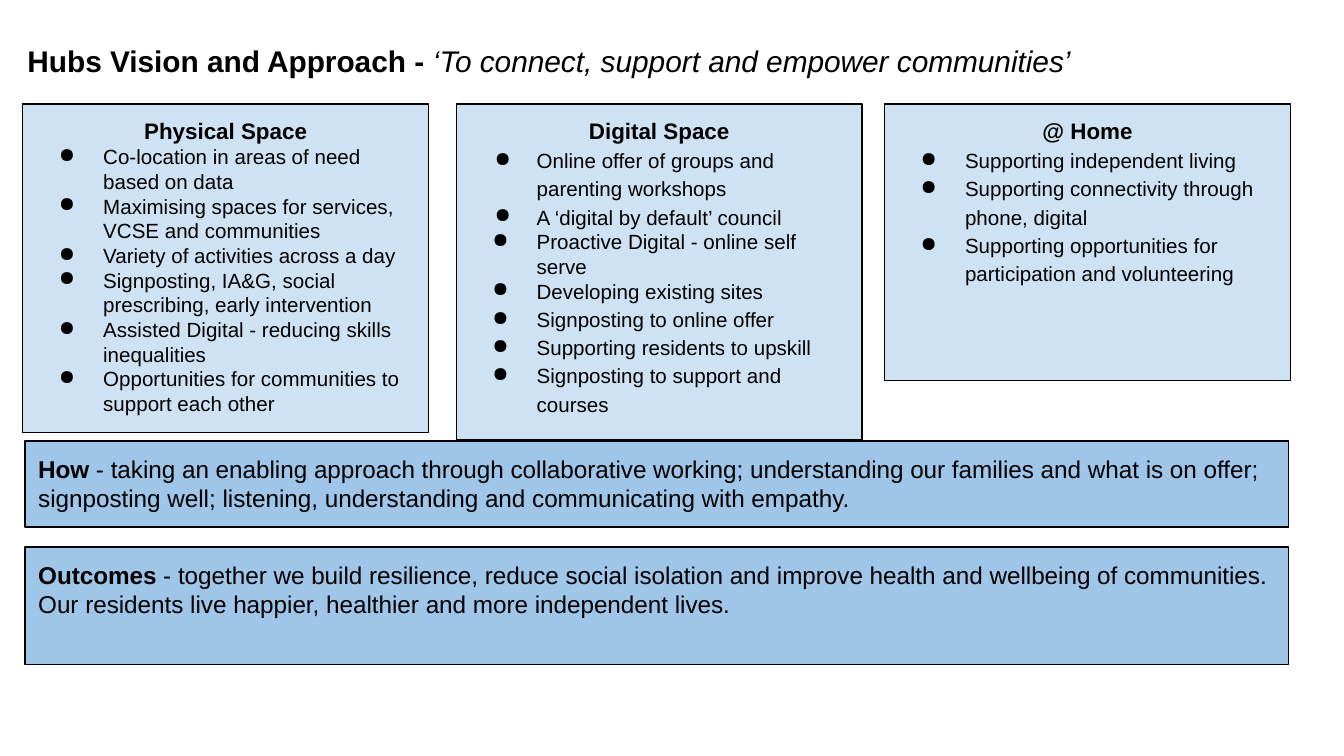
import pptx
import pptx.dml.color
import pptx.enum.shapes
import pptx.enum.text
import pptx.util
from lxml import etree

Pt = pptx.util.Pt
RGB = pptx.dml.color.RGBColor.from_string
Align = pptx.enum.text.PP_ALIGN
Anchor = pptx.enum.text.MSO_ANCHOR

THEME = {
    "font": "Arial", "ink": RGB("000000"),
    "space": RGB("CFE2F3"), "band": RGB("9FC5E8"),
    "title": Pt(16), "heading": Pt(12), "bullet": Pt(11), "statement": Pt(13),
}
INSET = Pt(7.2)
FRAME = {
    "word_wrap": True, "auto_size": pptx.enum.text.MSO_AUTO_SIZE.NONE,
    "margin_left": INSET, "margin_right": INSET,
    "margin_top": INSET, "margin_bottom": INSET,
}

# Each bullet: text, hanging indent in points, line spacing
SPACES = [
    ("Physical Space", 12.2, 175.9, [
        ("Co-location in areas of need based on data", 23.75, 1.0),
        ("Maximising spaces for services, VCSE and communities", 23.75, 1.0),
        ("Variety of activities across a day", 23.75, 1.0),
        ("Signposting, IA&G, social prescribing, early intervention", 23.75, 1.0),
        ("Assisted Digital - reducing skills inequalities", 23.75, 1.0),
        ("Opportunities for communities to support each other", 23.75, 1.0),
    ]),
    ("Digital Space", 244.4, 180, [
        ("Online offer of groups and parenting workshops", 22.5, 1.15),
        ("A ‘digital by default’ council", 22.5, 1.15),
        ("Proactive Digital - online self serve", 23.75, 1.0),
        ("Developing existing sites", 23.75, 1.0),
        ("Signposting to online offer", 23.75, 1.15),
        ("Supporting residents to upskill", 23.75, 1.15),
        ("Signposting to support and courses", 23.75, 1.15),
    ]),
    ("@ Home", 473.9, 148.3, [
        ("Supporting independent living", 23.75, 1.15),
        ("Supporting connectivity through phone, digital", 23.75, 1.15),
        ("Supporting opportunities for participation and volunteering", 23.75, 1.15),
    ]),
]
STATEMENTS = [
    ("How", 236.2, 46.1,
     " - taking an enabling approach through collaborative working; "
     "understanding our families and what is on offer; signposting well; "
     "listening, understanding and communicating with empathy."),
    ("Outcomes", 293, 63,
     " - together we build resilience, reduce social isolation and improve "
     "health and wellbeing of communities. Our residents live happier, "
     "healthier and more independent lives."),
]


def add_span(para, text, size, bold=False, italic=False):
    span = para.add_run()
    span.text = text
    look = {"name": THEME["font"], "size": size, "bold": bold, "italic": italic}
    for name, value in look.items():
        setattr(span.font, name, value)
    span.font.color.rgb = THEME["ink"]


def add_panel(left, top, width, height, fill):
    """Add an outlined box and return its text frame."""
    box = page.shapes.add_shape(
        pptx.enum.shapes.MSO_SHAPE.RECTANGLE,
        Pt(left), Pt(top), Pt(width), Pt(height))
    box.shadow.inherit = False
    box.fill.solid()
    box.fill.fore_color.rgb = fill
    box.line.color.rgb = THEME["ink"]
    box.line.width = Pt(0.75)
    for name, value in {**FRAME, "vertical_anchor": Anchor.TOP}.items():
        setattr(box.text_frame, name, value)
    return box.text_frame


deck = pptx.Presentation()
deck.slide_width, deck.slide_height = Pt(720), Pt(405)
page = deck.slides.add_slide(deck.slide_layouts[5])

title = page.shapes.title
place = {"left": Pt(7.5), "top": Pt(10.2), "width": Pt(671), "height": Pt(44.6)}
for name, value in place.items():
    setattr(title, name, value)
for name, value in {**FRAME, "vertical_anchor": Anchor.MIDDLE}.items():
    setattr(title.text_frame, name, value)
para = title.text_frame.paragraphs[0]
para.alignment = Align.LEFT
add_span(para, "Hubs Vision and Approach - ", THEME["title"], bold=True)
add_span(para, "‘To connect, support and empower communities’",
         THEME["title"], italic=True)

for heading, left, height, bullets in SPACES:
    frame = add_panel(left, 55.7, 217.5, height, THEME["space"])
    para = frame.paragraphs[0]
    para.alignment = Align.CENTER
    add_span(para, heading, THEME["heading"], bold=True)
    for text, hanging, spacing in bullets:
        para = frame.add_paragraph()
        para.alignment = Align.LEFT
        para.line_spacing = spacing
        add_span(para, text, THEME["bullet"])
        layout = para._p.get_or_add_pPr()
        layout.set("marL", str(Pt(36)))
        layout.set("indent", str(-Pt(hanging)))
        bullet = etree.SubElement(layout, pptx.oxml.ns.qn("a:buChar"))
        bullet.set("char", "●")

for heading, top, height, text in STATEMENTS:
    para = add_panel(13.4, top, 676.8, height, THEME["band"]).paragraphs[0]
    para.alignment = Align.LEFT
    add_span(para, heading, THEME["statement"], bold=True)
    add_span(para, text, THEME["statement"])

deck.save("out.pptx")
